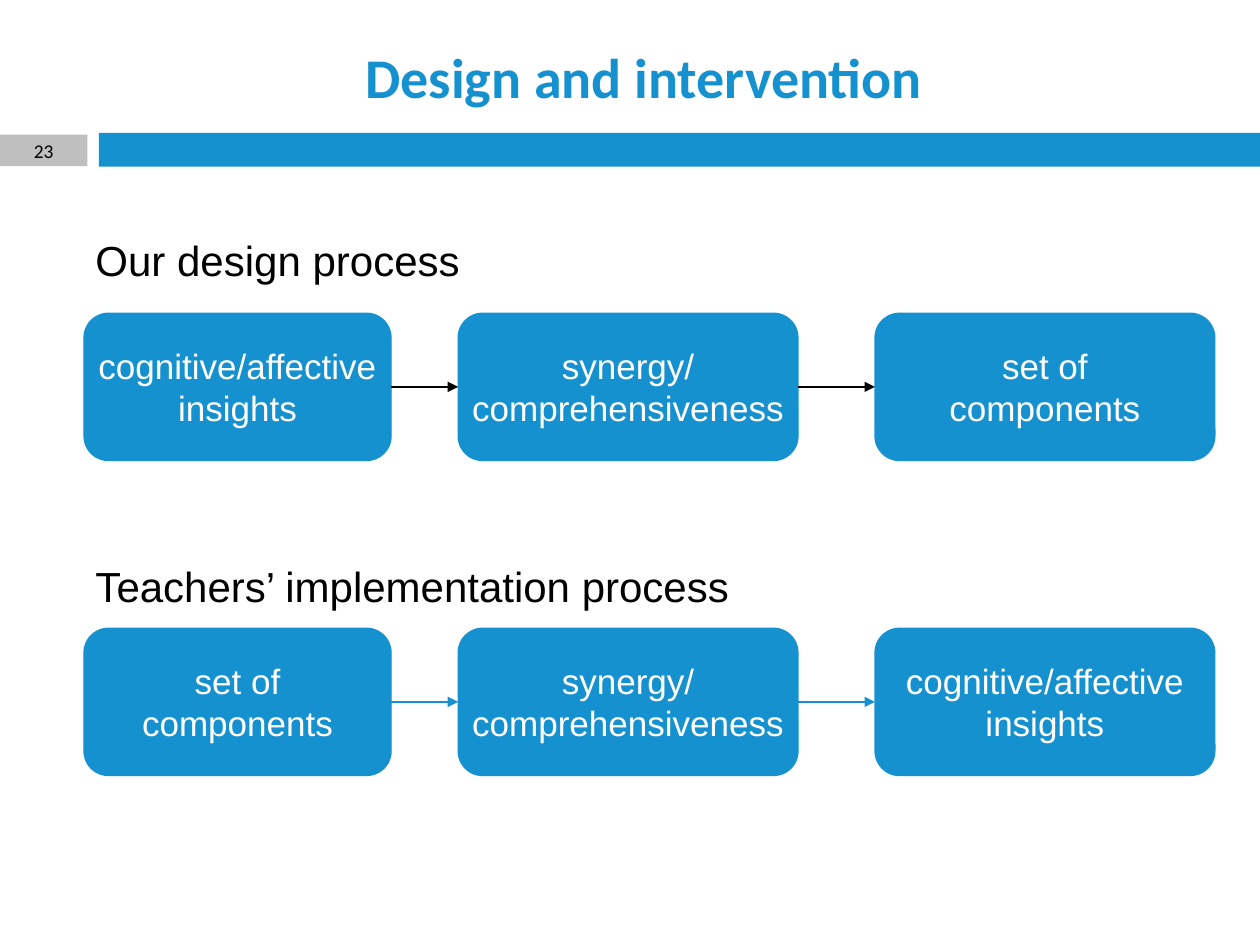
from pptx import Presentation
from pptx.dml.color import RGBColor
from pptx.enum.shapes import MSO_CONNECTOR, MSO_SHAPE
from pptx.enum.text import MSO_ANCHOR, MSO_AUTO_SIZE, PP_ALIGN
from pptx.oxml.ns import qn
from pptx.util import Pt
from lxml.etree import SubElement

COLORS = {"blue": "1691D0", "gray": "BFBFBF", "black": "000000", "white": "FFFFFF"}


def write(frame, text, font, size, color, align=PP_ALIGN.CENTER, bold=False):
    frame.text = text
    for para in frame.paragraphs:
        para.alignment = align
        for span in para.runs:
            span.font.name = font
            span.font.size = Pt(size)
            span.font.bold = bold
            span.font.color.rgb = RGBColor.from_string(COLORS[color])


def add_block(kind, left, top, width, height, color):
    block = page.shapes.add_shape(kind, Pt(left), Pt(top), Pt(width), Pt(height))
    block.shadow.inherit = False
    block.fill.solid()
    block.fill.fore_color.rgb = RGBColor.from_string(COLORS[color])
    block.line.fill.background()
    block.text_frame.vertical_anchor = MSO_ANCHOR.MIDDLE
    return block


deck = Presentation()
deck.slide_width, deck.slide_height = Pt(720), Pt(540)
page = deck.slides.add_slide(deck.slide_layouts[5])

add_block(MSO_SHAPE.RECTANGLE, 56.5, 76, 663.5, 19.2, "blue")
number_box = add_block(MSO_SHAPE.RECTANGLE, 0, 77, 50, 18, "gray")
number_box.text_frame.margin_top = number_box.text_frame.margin_bottom = 0
write(number_box.text_frame, "23", "Calibri", 11.1, "black")

title = page.shapes.title
title.left, title.top, title.width, title.height = Pt(56.2), Pt(18.7), Pt(623.5), Pt(49)
title.text_frame.vertical_anchor = MSO_ANCHOR.MIDDLE
write(title.text_frame, "Design and intervention", "Calibri", 32, "blue", bold=True)

insights = "cognitive/affective\ninsights"
synergy = "synergy/\ncomprehensiveness"
columns = [(48, 175.5), (261.8, 194.2), (500, 194.2)]
processes = [
    ("Our design process", 130.3, 225, 179, "black",
     [insights, synergy, "set of\vcomponents"]),
    ("Teachers’ implementation process", 316.8, 380, 359, "blue",
     ["set of\ncomponents", synergy, insights]),
]

for heading, heading_top, heading_width, top, arrow_color, steps in processes:
    heading_box = page.shapes.add_textbox(Pt(47.5), Pt(heading_top), Pt(heading_width), Pt(36))
    heading_box.text_frame.word_wrap = False
    heading_box.text_frame.auto_size = MSO_AUTO_SIZE.SHAPE_TO_FIT_TEXT
    write(heading_box.text_frame, heading, "Arial", 24, "black", PP_ALIGN.LEFT)

    boxes = []
    for (left, width), step in zip(columns, steps):
        box = add_block(MSO_SHAPE.ROUNDED_RECTANGLE, left, top, width, 84.2, "blue")
        box.line.color.rgb = RGBColor.from_string(COLORS["blue"])
        box.line.width = Pt(0.75)
        box.text_frame.word_wrap = False
        write(box.text_frame, step, "Arial", 20, "white")
        boxes.append(box)

    for source, target in zip(boxes, boxes[1:]):
        arrow = page.shapes.add_connector(MSO_CONNECTOR.STRAIGHT, 0, 0, 0, 0)
        arrow.begin_connect(source, 3)
        arrow.end_connect(target, 1)
        arrow.line.width = Pt(0.75)
        arrow.line.color.rgb = RGBColor.from_string(COLORS[arrow_color])
        SubElement(arrow.line._get_or_add_ln(), qn("a:tailEnd"), type="triangle")
        SubElement(arrow._element.spPr, qn("a:effectLst"))

deck.save("out.pptx")
